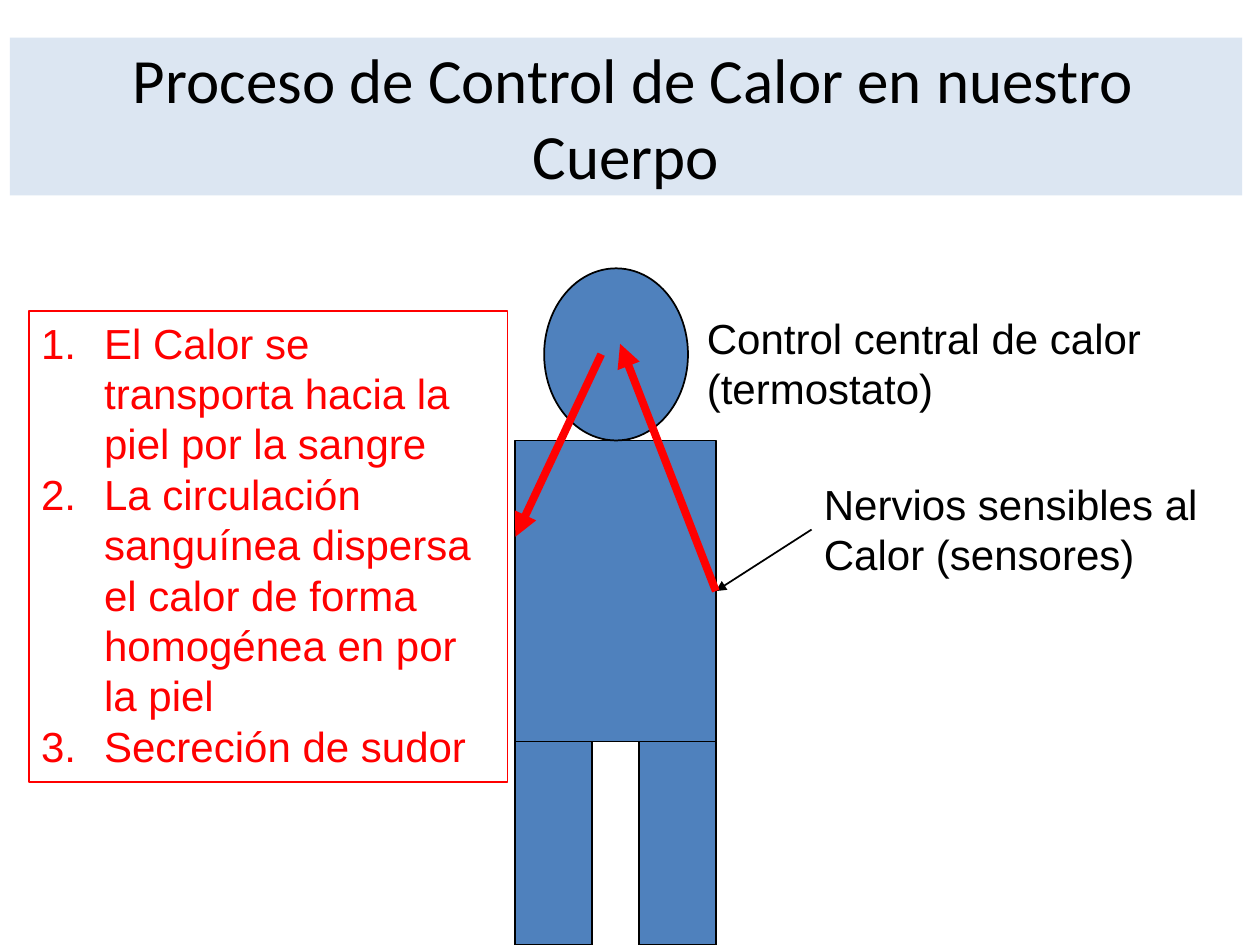
from lxml import etree
from pptx import Presentation
from pptx import util as u
from pptx.dml.color import RGBColor
from pptx.enum import shapes, text
from pptx.oxml import ns

BLUE = RGBColor(0x4F, 0x81, 0xBD)
PALE = RGBColor(0xDC, 0xE6, 0xF2)
RED = RGBColor(0xFF, 0, 0)
BLACK = RGBColor(0, 0, 0)
RECT = shapes.MSO_SHAPE.RECTANGLE
OVAL = shapes.MSO_SHAPE.OVAL


def shape(slide, kind, box, fill=None, line=None):
    """Add a preset shape in a box given in centimetres."""
    item = slide.shapes.add_shape(kind, *map(u.Cm, box))
    item.shadow.inherit = False
    if fill is None:
        item.fill.background()
    else:
        item.fill.solid()
        item.fill.fore_color.rgb = fill
    if line is None:
        item.line.fill.background()
    else:
        item.line.color.rgb = line
        item.line.width = u.Pt(1)
    return item


def write(item, lines, font="Arial", size=24, color=BLACK, align=text.PP_ALIGN.LEFT,
          anchor=text.MSO_ANCHOR.TOP, wrap=True, numbered=False):
    """Write one paragraph per line into a shape."""
    frame = item.text_frame
    frame.word_wrap = wrap
    frame.vertical_anchor = anchor
    for i, line in enumerate(lines):
        para = frame.add_paragraph() if i else frame.paragraphs[0]
        para.alignment = align
        run = para.add_run()
        run.text = line
        run.font.name = font
        run.font.size = u.Pt(size)
        run.font.color.rgb = color
        if numbered:
            props = para._p.get_or_add_pPr()
            props.set("marL", str(u.Cm(1.27)))
            props.set("indent", str(-u.Cm(1.27)))
            etree.SubElement(props, ns.qn("a:buFont"), typeface="+mj-lt")
            etree.SubElement(props, ns.qn("a:buAutoNum"), type="arabicPeriod")


def arrow(slide, start, end, color=BLACK, width=1):
    """Add a straight arrow between two points in centimetres."""
    link = slide.shapes.add_connector(shapes.MSO_CONNECTOR.STRAIGHT,
                                      *map(u.Cm, (*start, *end)))
    link.line.color.rgb = color
    link.line.width = u.Pt(width)
    etree.SubElement(link.line._get_or_add_ln(), ns.qn("a:tailEnd"), type="triangle")
    etree.SubElement(link._element.spPr, ns.qn("a:effectLst"))
    return link


def label(slide, box, lines):
    """Add a plain black label."""
    item = slide.shapes.add_textbox(*map(u.Cm, box))
    write(item, lines, wrap=False)
    return item


def title(slide, box):
    """Add the title band."""
    band = shape(slide, RECT, box, PALE)
    write(band, [" Proceso de Control de Calor en nuestro Cuerpo"], font="Calibri",
          size=36, align=text.PP_ALIGN.CENTER, anchor=text.MSO_ANCHOR.MIDDLE)


def steps(slide, box):
    """Add the framed list of numbered steps."""
    frame = shape(slide, RECT, box, line=RED)
    write(frame, ["El Calor se transporta hacia la piel por la sangre",
                  "La circulación sanguínea dispersa el calor de forma "
                  "homogénea en por la piel",
                  "Secreción de sudor"], color=RED, numbered=True)


def body(slide, box):
    """Add the figure, its labels and the arrows of the heat loop."""
    x, y, w, h = box
    head, trunk, leg = 3.47, 6.07, 1.55
    hip = head + trunk
    torso = shape(slide, RECT, (x, y + head, w, trunk), BLUE, BLACK)
    shape(slide, OVAL, (x + 0.58, y, 2.9, head), BLUE, BLACK)
    for left in (x, x + w - leg):
        shape(slide, RECT, (left, y + hip, leg, h - hip), BLUE, BLACK)

    nerve = label(slide, (x + 5.97, y + 4.11, 8.13, 2.31),
                  ["Nervios sensibles al", "Calor (sensores)"])
    label(slide, (x + 3.61, y + 0.76, 9.55, 2.31),
          ["Control central de calor", "(termostato)"])

    side = (x + w, y + head + trunk / 2)
    sense = arrow(slide, (x + 5.97, y + 5.26), side)
    sense.begin_connect(nerve, 1)
    sense.end_connect(torso, 3)
    rise = arrow(slide, side, (x + 2.11, y + 1.52), RED, 4.5)
    rise.begin_connect(torso, 3)
    arrow(slide, (x + 1.73, y + 1.73), (x, y + 5.41), RED, 4.5)


def main():
    """Build the slide and save it."""
    deck = Presentation()
    deck.slide_width, deck.slide_height = u.Cm(25.4), u.Cm(19.05)
    slide = deck.slides.add_slide(deck.slide_layouts[6])
    title(slide, (0.2, 0.76, 24.84, 3.18))
    steps(slide, (0.58, 6.27, 9.65, 9.5))
    body(slide, (10.39, 5.41, 4.04, 13.64))
    deck.save("out.pptx")


if __name__ == "__main__":
    main()
